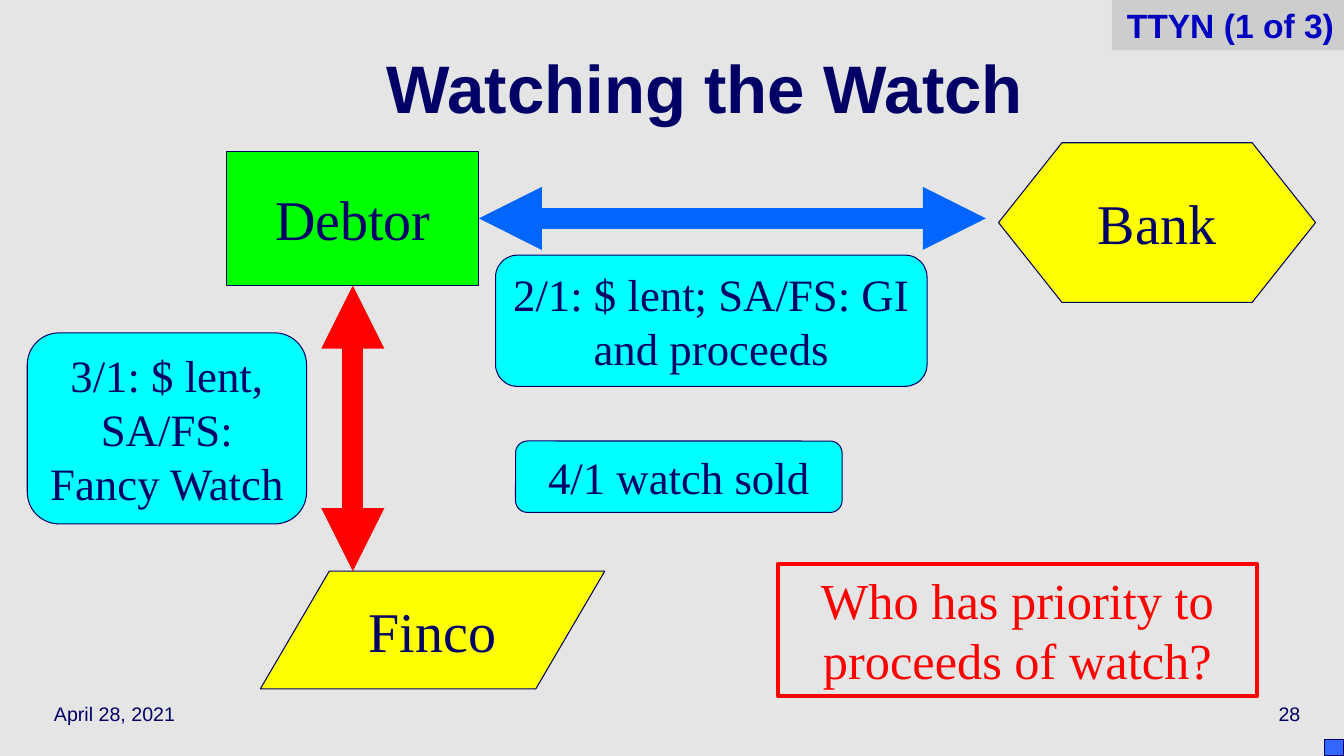
from lxml import etree
from pptx import Presentation
from pptx import util as u
from pptx.dml.color import RGBColor
from pptx.enum import shapes, text
from pptx.oxml import ns

PX = 9525
NAVY = RGBColor(0x00, 0x00, 0x66)
INK = RGBColor(0x00, 0x00, 0xC0)
RED = RGBColor(0xFF, 0x00, 0x00)
BLUE = RGBColor(0x00, 0x66, 0xFF)
CORNER = RGBColor(0x33, 0x66, 0xFF)
GREEN = RGBColor(0x00, 0xFF, 0x00)
YELLOW = RGBColor(0xFF, 0xFF, 0x00)
CYAN = RGBColor(0x00, 0xFF, 0xFF)
PAPER = RGBColor(0xE5, 0xE5, 0xE5)
GREY = RGBColor(0xCD, 0xCD, 0xCD)
SANS, SERIF = "Arial", "Times New Roman"
KIND = shapes.MSO_SHAPE
ALIGN = text.PP_ALIGN
ANCHOR = text.MSO_ANCHOR


def scale(*sizes):
    """Turn px into EMU."""
    return [u.Emu(size * PX) for size in sizes]


def write(shape, words, size, font=SERIF, color=NAVY, bold=False,
          align=ALIGN.CENTER, anchor=ANCHOR.MIDDLE, wrap=True):
    """Put one run of text in a shape and return its paragraph."""
    frame = shape.text_frame
    frame.word_wrap = wrap
    frame.vertical_anchor = anchor
    para = frame.paragraphs[0]
    para.alignment = align
    run = para.add_run()
    run.text = words
    run.font.size = u.Pt(size)
    run.font.name = font
    run.font.bold = bold
    run.font.color.rgb = color
    return para


def label(slide, box, words, size, **style):
    """Add a plain text box."""
    return write(slide.shapes.add_textbox(*scale(*box)), words, size, SANS, **style)


def block(slide, kind, box, fill=None, line=NAVY, width=0.75):
    """Add a preset shape with flat fill and line."""
    shape = slide.shapes.add_shape(kind, *scale(*box))
    shape.shadow.inherit = False
    if fill is None:
        shape.fill.background()
    else:
        shape.fill.solid()
        shape.fill.fore_color.rgb = fill
    if line is None:
        shape.line.fill.background()
    else:
        shape.line.color.rgb = line
        shape.line.width = u.Pt(width)
    return shape


def arrow(slide, ends, color, source, site):
    """Add a thick two-headed arrow that starts at a shape's side."""
    link = slide.shapes.add_connector(shapes.MSO_CONNECTOR.STRAIGHT, *scale(*ends))
    link.begin_connect(source, site)
    link.line.color.rgb = color
    link.line.width = u.Pt(15)
    edge = link.line._get_or_add_ln()
    for tag in ("a:headEnd", "a:tailEnd"):
        etree.SubElement(edge, ns.qn(tag), type="triangle")
    etree.SubElement(link._element.spPr, ns.qn("a:effectLst"))


def frame(slide, box):
    """Place the title, tag, footer and corner mark."""
    left, top, width, height = box
    right, base = left + width, top + height
    title = label(slide, (left + 85, top + 32, 1173, 120), "Watching the Watch", 48,
                  color=NAVY, bold=True)
    title.line_spacing = 0.7
    label(slide, (left + 42, base - 64, 267, 48), "April 28, 2021", 14, align=ALIGN.LEFT)
    label(slide, (right - 299, base - 64, 267, 48), "28", 14, align=ALIGN.RIGHT)
    block(slide, KIND.RECTANGLE, (right - 19, base - 16, 19, 16), CORNER)
    tag = block(slide, KIND.RECTANGLE, (right - 221, top, 221, 48), GREY, None)
    write(tag, "TTYN (1 of 3)", 24, SANS, INK, True, ALIGN.RIGHT, ANCHOR.TOP)


def deal(slide, box):
    """Place the parties, the loans between them and the sale."""
    left, top = box[:2]
    parties = (
        ("Finco", KIND.FLOWCHART_DATA, (32, 408, 328, 112), YELLOW),
        ("Debtor", KIND.FLOWCHART_PROCESS, (0, 8, 240, 128), GREEN),
        ("Bank", KIND.FLOWCHART_PREPARATION, (735, 0, 302, 152), YELLOW),
    )
    made = {}
    for name, kind, (x, y, width, height), fill in parties:
        made[name] = block(slide, kind, (left + x, top + y, width, height), fill)
        write(made[name], name, 40, wrap=False)
    debtor = made["Debtor"]
    arrow(slide, (left + 240, top + 72, left + 723, top + 72), BLUE, debtor, 3)
    arrow(slide, (left + 120, top + 136, left + 120, top + 408), RED, debtor, 2)
    events = (
        ("2/1: $ lent; SA/FS: GI and proceeds", (256, 107, 411, 125)),
        ("3/1: $ lent, SA/FS: Fancy Watch", (-190, 181, 266, 182)),
        ("4/1 watch sold", (275, 284, 311, 68)),
    )
    for words, (x, y, width, height) in events:
        note = block(slide, KIND.FLOWCHART_ALTERNATE_PROCESS,
                     (left + x, top + y, width, height), CYAN)
        write(note, words, 32)


def query(slide, box):
    """Place the framed question."""
    shape = block(slide, KIND.RECTANGLE, box, None, RED, 3)
    write(shape, "Who has priority to proceeds of watch?", 36, color=RED,
          anchor=ANCHOR.TOP)


def main():
    """Build and save the slide."""
    deck = Presentation()
    deck.slide_width, deck.slide_height = scale(1280, 720)
    slide = deck.slides.add_slide(deck.slide_layouts[6])
    slide.background.fill.solid()
    slide.background.fill.fore_color.rgb = PAPER
    frame(slide, (0, 0, 1280, 720))
    deal(slide, (216, 136, 1037, 520))
    query(slide, (741, 537, 456, 126))
    deck.save("out.pptx")


if __name__ == "__main__":
    main()
